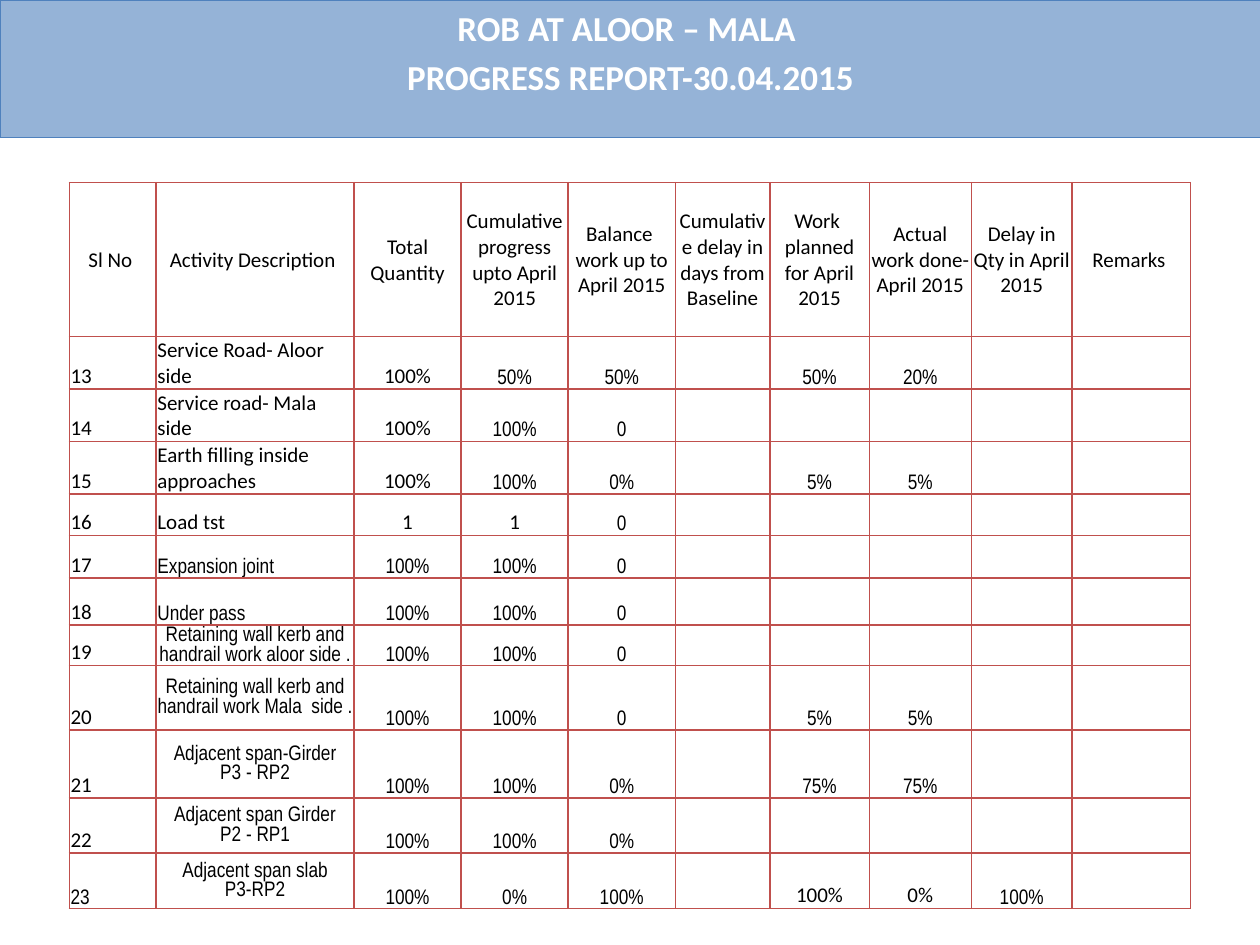
from lxml import etree
from pptx import Presentation
from pptx.dml.color import RGBColor
from pptx.enum.text import MSO_ANCHOR, MSO_AUTO_SIZE, PP_ALIGN
from pptx.oxml.ns import qn
from pptx.util import Inches, Pt

CENTER, LEFT = PP_ALIGN.CENTER, PP_ALIGN.LEFT
TOP, MIDDLE, BOTTOM = MSO_ANCHOR.TOP, MSO_ANCHOR.MIDDLE, MSO_ANCHOR.BOTTOM
NO_AUTOFIT = MSO_AUTO_SIZE.NONE
TITLE_ONLY = 5

TITLE = "ROB AT ALOOR – MALA \nPROGRESS REPORT-30.04.2015"
HEADERS = [
    "Sl No ", "Activity Description ", "Total Quantity",
    "Cumulative progress upto April 2015", "Balance  work up to April 2015",
    "Cumulative delay in days from Baseline", "Work  planned for April 2015",
    "Actual work done- April 2015", "Delay in Qty in April 2015", "Remarks ",
]
ACTIVITIES = [
    ["13", "Service Road- Aloor side", "100%", "50%", "50%", "", "50%", "20%"],
    ["14", "Service road- Mala side", "100%", "100%", "0"],
    ["15", "Earth filling inside approaches", "100%", "100%", "0%", "", "5%", "5%"],
    ["16", "Load tst", "1", "1", "0"],
    ["17", "Expansion joint", "100%", "100%", "0"],
    ["18", "Under pass", "100%", "100%", "0"],
    ["19", "Retaining wall kerb and handrail work aloor side .", "100%", "100%", "0"],
    ["20", "Retaining wall kerb and handrail work Mala  side .", "100%", "100%", "0", "", "5%", "5%"],
    ["21", "Adjacent span-Girder\vP3 - RP2", "100%", "100%", "0%", "", "75%", "75%"],
    ["22", "Adjacent span Girder\vP2 - RP1", "100%", "100%", "0%"],
    ["23", "Adjacent span slab\vP3-RP2", "100%", "0%", "100%", "", "100%", "0%", "100%"],
]
COLUMN_WIDTHS = [0.69, 1.57, 0.85, 0.85, 0.85, 0.75, 0.79, 0.81, 0.8, 0.94]
ROW_HEIGHTS = [1.22, 0.28, 0.32, 0.22, 0.33, 0.34, 0.37, 0.22, 0.51, 0.54, 0.44, 0.44]
CALIBRI_COLUMNS = {
    "13": (0, 1, 2), "14": (0, 1, 2), "15": (0, 1, 2),
    "16": (0, 1, 2, 3), "23": (6, 7),
}
FIRST_CENTERED_ACTIVITY = 19


def color(value):
    return RGBColor.from_string(value)


class ReportSlide:
    main_font = "Calibri"
    narrow_font = "Arial Narrow"
    banner_fill = "95B3D7"
    banner_line = "4F81BD"
    border = "C0504D"

    def __init__(self, presentation):
        self.slide = presentation.slides.add_slide(presentation.slide_layouts[TITLE_ONLY])

    def format_font(self, font, name, size, hex_color, bold=False):
        font.name = name
        font.size = Pt(size)
        font.bold = bold
        font.color.rgb = color(hex_color)

    def title(self, text, left, top, width, height):
        shape = self.slide.shapes.title
        shape.left, shape.top = Inches(left), Inches(top)
        shape.width, shape.height = Inches(width), Inches(height)
        shape.fill.solid()
        shape.fill.fore_color.rgb = color(self.banner_fill)
        shape.line.color.rgb = color(self.banner_line)
        shape.line.width = Pt(0.75)
        frame = shape.text_frame
        frame.text = text
        frame.auto_size = NO_AUTOFIT
        frame.vertical_anchor = TOP
        for paragraph in frame.paragraphs:
            paragraph.alignment = CENTER
            paragraph.space_before = Pt(4)
            for run in paragraph.runs:
                self.format_font(run.font, self.main_font, 20, "FFFFFF", True)

    def table(self, rows, left, top, widths, heights):
        frame = self.slide.shapes.add_table(
            len(rows), len(widths), Inches(left), Inches(top),
            Inches(sum(widths)), Inches(sum(heights)))
        table = frame.table
        table.first_row = table.horz_banding = False
        for column, width in zip(table.columns, widths):
            column.width = Inches(width)
        for row, height in zip(table.rows, heights):
            row.height = Inches(height)
        for row_index, values in enumerate(rows):
            for column_index in range(len(widths)):
                text = values[column_index] if column_index < len(values) else ""
                self.cell(table.cell(row_index, column_index), text,
                          *self.cell_style(values[0], row_index, column_index))

    def cell_style(self, number, row_index, column_index):
        if row_index == 0:
            return self.main_font, CENTER, MIDDLE
        calibri = column_index in CALIBRI_COLUMNS.get(number, (0,))
        font = self.main_font if calibri else self.narrow_font
        if column_index == 1 and int(number) >= FIRST_CENTERED_ACTIVITY:
            return font, CENTER, MIDDLE
        return font, LEFT if column_index < 2 else CENTER, BOTTOM

    def cell(self, cell, text, font_name, alignment, anchor):
        cell.fill.background()
        cell.margin_left = cell.margin_right = cell.margin_top = Inches(0.01)
        cell.margin_bottom = 0
        cell.vertical_anchor = anchor
        cell.text_frame.text = text
        paragraph = cell.text_frame.paragraphs[0]
        paragraph.alignment = alignment
        self.format_font(paragraph.font, font_name, 12, "000000")
        for run in paragraph.runs:
            self.format_font(run.font, font_name, 12, "000000")
        if not text:
            end = etree.SubElement(paragraph._p, qn("a:endParaRPr"))
            end.set("sz", "1200")
        self.cell_borders(cell)

    def cell_borders(self, cell):
        properties = cell._tc.get_or_add_tcPr()
        for position, side in enumerate(("a:lnL", "a:lnR", "a:lnT", "a:lnB")):
            line = etree.Element(qn(side), w=str(Pt(1)))
            fill = etree.SubElement(line, qn("a:solidFill"))
            etree.SubElement(fill, qn("a:srgbClr"), val=self.border)
            properties.insert(position, line)


def main():
    presentation = Presentation()
    presentation.slide_width = Inches(10)
    presentation.slide_height = Inches(7.5)
    report = ReportSlide(presentation)
    report.title(TITLE, 0, 0, 10.01, 1.09)
    report.table([HEADERS] + ACTIVITIES, 0.55, 1.45, COLUMN_WIDTHS, ROW_HEIGHTS)
    presentation.save("out.pptx")


if __name__ == "__main__":
    main()
